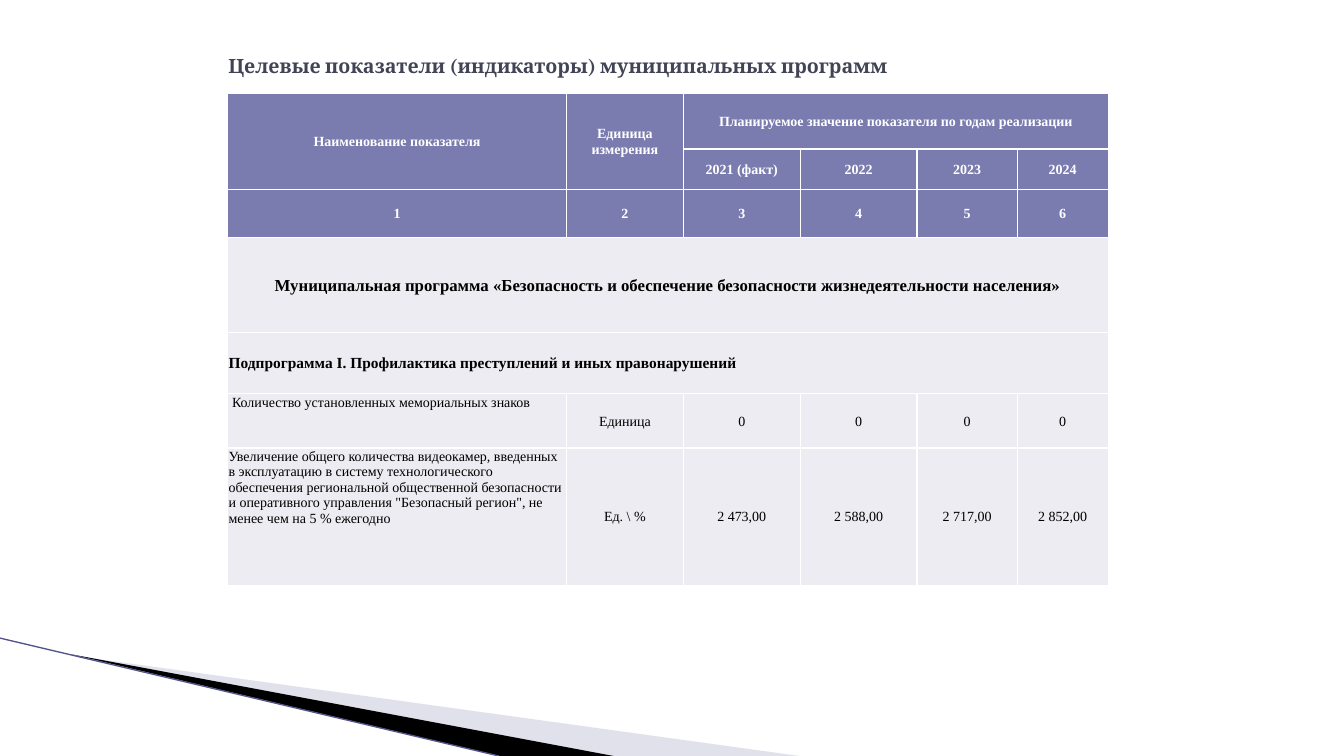
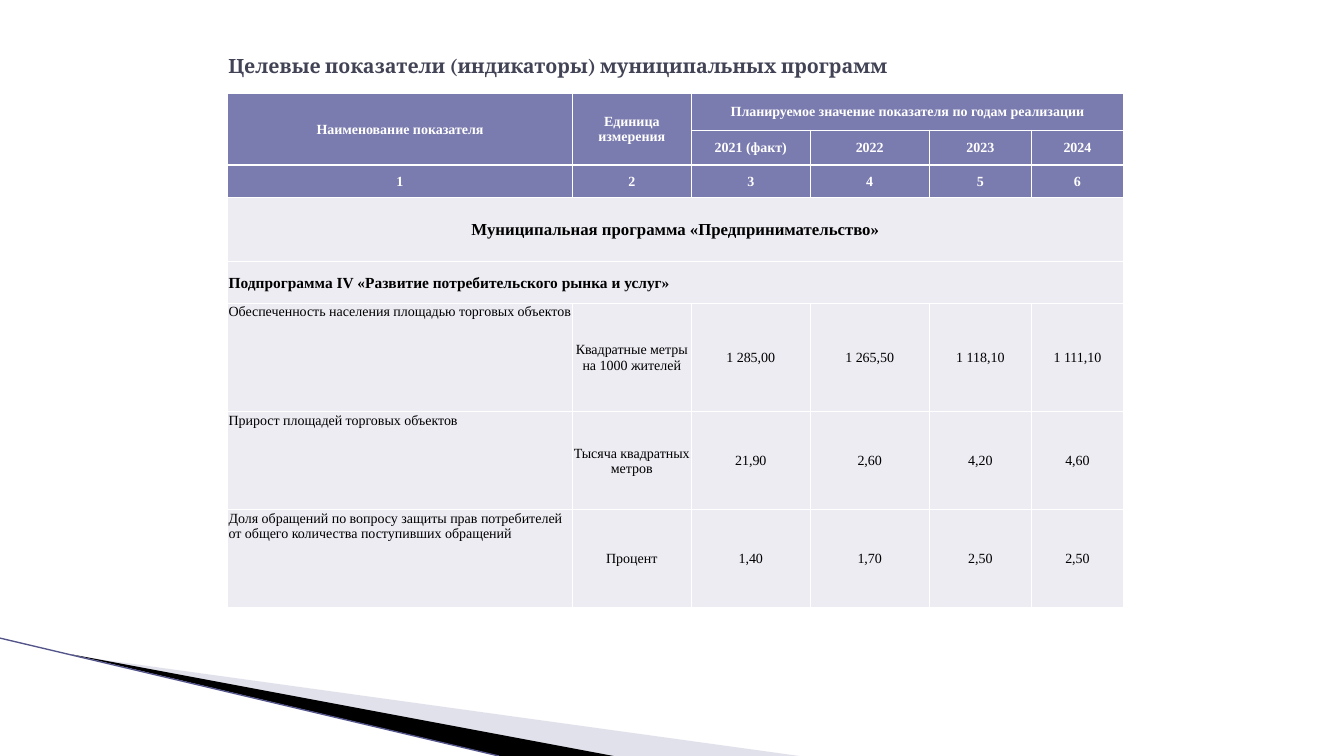
from lxml import etree
from pptx import Presentation
from pptx.dml.color import RGBColor
from pptx.enum.shapes import MSO_CONNECTOR
from pptx.enum.text import MSO_ANCHOR, PP_ALIGN
from pptx.oxml.ns import qn
from pptx.util import Pt

LEFT, CENTER = PP_ALIGN.LEFT, PP_ALIGN.CENTER
TOP, MIDDLE = MSO_ANCHOR.TOP, MSO_ANCHOR.MIDDLE
STRAIGHT = MSO_CONNECTOR.STRAIGHT

WIDTH, HEIGHT = 960, 540
TABLE_LEFT, TABLE_TOP = 162.6, 66.4
TITLE = "Целевые показатели (индикаторы) муниципальных программ"
HEADER = [
    ["Наименование показателя", "Единица измерения",
     "Планируемое значение показателя по годам реализации"],
    ["", "", "2021 (факт)", "2022", "2023", "2024"],
    ["1", "2", "3", "4", "5", "6"],
]

SLIDES = [
    {
        "columns": [242, 83.5, 83.5, 83.5, 71.5, 65],
        "rows": [40, 28.8, 34.6, 67.7, 43.8, 38.8, 98],
        "program": "Муниципальная программа «Безопасность и обеспечение "
                   "безопасности жизнедеятельности населения»",
        "subprogram": "Подпрограмма I. Профилактика преступлений и иных правонарушений",
        "indicators": [
            [" Количество установленных мемориальных знаков", "Единица",
             "0", "0", "0", "0"],
            ["Увеличение общего количества видеокамер, введенных в эксплуатацию "
             "в систему технологического обеспечения региональной общественной "
             "безопасности и оперативного управления \"Безопасный регион\", "
             "не менее чем на 5 % ежегодно", "Ед. \\ %",
             "2 473,00", "2 588,00", "2 717,00", "2 852,00"],
        ],
    },
    {
        "columns": [246.2, 85, 85, 85, 73, 65.8],
        "rows": [26.7, 22.8, 23, 46, 29.8, 77.6, 70, 69.8],
        "program": "Муниципальная программа «Предпринимательство»",
        "subprogram": "Подпрограмма IV «Развитие потребительского рынка и услуг»",
        "indicators": [
            ["Обеспеченность населения площадью торговых объектов",
             "Квадратные метры на 1000 жителей",
             "1 285,00", "1 265,50", "1 118,10", "1 111,10"],
            ["Прирост площадей торговых объектов", "Тысяча квадратных метров",
             "21,90", "2,60", "4,20", "4,60"],
            ["Доля обращений по вопросу защиты прав потребителей от общего "
             "количества поступивших обращений", "Процент",
             "1,40", "1,70", "2,50", "2,50"],
        ],
    },
]


def rgb(value):
    return RGBColor.from_string(value)


def apply(target, values):
    for name, value in values.items():
        setattr(target, name, value)


class Deck:
    """Holds the style of the presentation and the slide being built."""

    COLORS = {"title": "424456", "header": "7A7BAE", "body": "ECECF2",
              "border": "FFFFFF", "pale": "B6B6D1", "dark": "000000", "line": "53548A"}
    TITLE_FONT = {"name": "Cambria", "size": Pt(14), "bold": True}
    TABLE_FONT = "Times New Roman"
    # Size, bold, text colour, fill
    ROW_STYLES = {
        "header": (10, True, "FFFFFF", COLORS["header"]),
        "program": (12, True, "000000", COLORS["body"]),
        "subprogram": (11, True, "000000", COLORS["body"]),
        "indicator": (10, False, "000000", COLORS["body"]),
    }
    CELL_MARGINS = {"margin_left": Pt(0.7), "margin_right": Pt(0.7),
                    "margin_top": Pt(0.7), "margin_bottom": Pt(0)}

    def __init__(self):
        self.presentation = Presentation()
        apply(self.presentation, {"slide_width": Pt(WIDTH), "slide_height": Pt(HEIGHT)})
        self.slide = None

    def add_slide(self):
        self.slide = self.presentation.slides.add_slide(self.presentation.slide_layouts[6])
        self.wedge([(52.6, 468.4), (571, HEIGHT), (437.8, HEIGHT)], "pale", 40)
        self.wedge([(51.2, 467.4), (438.4, HEIGHT), (357, HEIGHT)], "dark")
        self.line((0, 455.8), (356.4, HEIGHT))
        self.title(TITLE)

    def wedge(self, points, color, opacity=100):
        builder = self.slide.shapes.build_freeform(*map(Pt, points[0]))
        builder.add_line_segments([(Pt(x), Pt(y)) for x, y in points[1:]])
        shape = builder.convert_to_shape()
        shape.shadow.inherit = False
        shape.line.fill.background()
        shape.fill.solid()
        shape.fill.fore_color.rgb = rgb(self.COLORS[color])
        if opacity < 100:
            fill_color = next(shape.element.spPr.iter(qn("a:srgbClr")))
            etree.SubElement(fill_color, qn("a:alpha"), val=str(opacity * 1000))

    def line(self, start, end):
        connector = self.slide.shapes.add_connector(STRAIGHT, *map(Pt, start + end))
        connector.line.color.rgb = rgb(self.COLORS["line"])
        connector.line.width = Pt(0.95)
        etree.SubElement(connector.element.spPr, qn("a:effectLst"))

    def title(self, text):
        frame = self.slide.shapes.add_textbox(Pt(156), Pt(21.6), Pt(648), Pt(50)).text_frame
        apply(frame, {"word_wrap": True, "vertical_anchor": MIDDLE, "text": text})
        font = frame.paragraphs[0].font
        apply(font, self.TITLE_FONT)
        font.color.rgb = rgb(self.COLORS["title"])

    def border(self, cell):
        properties = cell._tc.get_or_add_tcPr()
        for index, side in enumerate(("lnL", "lnR", "lnT", "lnB")):
            line = etree.Element(qn(f"a:{side}"), w=str(Pt(1)))
            fill = etree.SubElement(line, qn("a:solidFill"))
            etree.SubElement(fill, qn("a:srgbClr"), val=self.COLORS["border"])
            properties.insert(index, line)

    def cell(self, cell, text, style, alignment=CENTER, anchor=MIDDLE):
        size, bold, color, fill = self.ROW_STYLES[style]
        apply(cell, {**self.CELL_MARGINS, "text": text, "vertical_anchor": anchor})
        cell.fill.solid()
        cell.fill.fore_color.rgb = rgb(fill)
        paragraph = cell.text_frame.paragraphs[0]
        paragraph.alignment = alignment
        apply(paragraph.font, {"name": self.TABLE_FONT, "size": Pt(size), "bold": bold})
        paragraph.font.color.rgb = rgb(color)
        self.border(cell)

    def indicator_table(self, columns, rows, program, subprogram, indicators):
        table = self.slide.shapes.add_table(
            len(rows), len(columns), Pt(TABLE_LEFT), Pt(TABLE_TOP),
            Pt(sum(columns)), Pt(sum(rows))).table
        apply(table, {"first_row": False, "horz_banding": False})
        for column, width in zip(table.columns, columns):
            column.width = Pt(width)
        for row, height in zip(table.rows, rows):
            row.height = Pt(height)

        lines = [("header", texts) for texts in HEADER]
        lines += [("program", [program]), ("subprogram", [subprogram])]
        lines += [("indicator", texts) for texts in indicators]
        for row, (style, texts) in enumerate(lines):
            for column in range(len(columns)):
                text = texts[column] if column < len(texts) else ""
                first = column == 0
                alignment = LEFT if first and style in ("subprogram", "indicator") else CENTER
                anchor = TOP if first and style == "indicator" else MIDDLE
                self.cell(table.cell(row, column), text, style, alignment, anchor)

        last = len(columns) - 1
        for start, end in [((0, 0), (1, 0)), ((0, 1), (1, 1)), ((0, 2), (0, last)),
                           ((3, 0), (3, last)), ((4, 0), (4, last))]:
            table.cell(*start).merge(table.cell(*end))


def main():
    deck = Deck()
    for content in SLIDES:
        deck.add_slide()
        deck.indicator_table(**content)
    deck.presentation.save("out.pptx")


if __name__ == "__main__":
    main()
